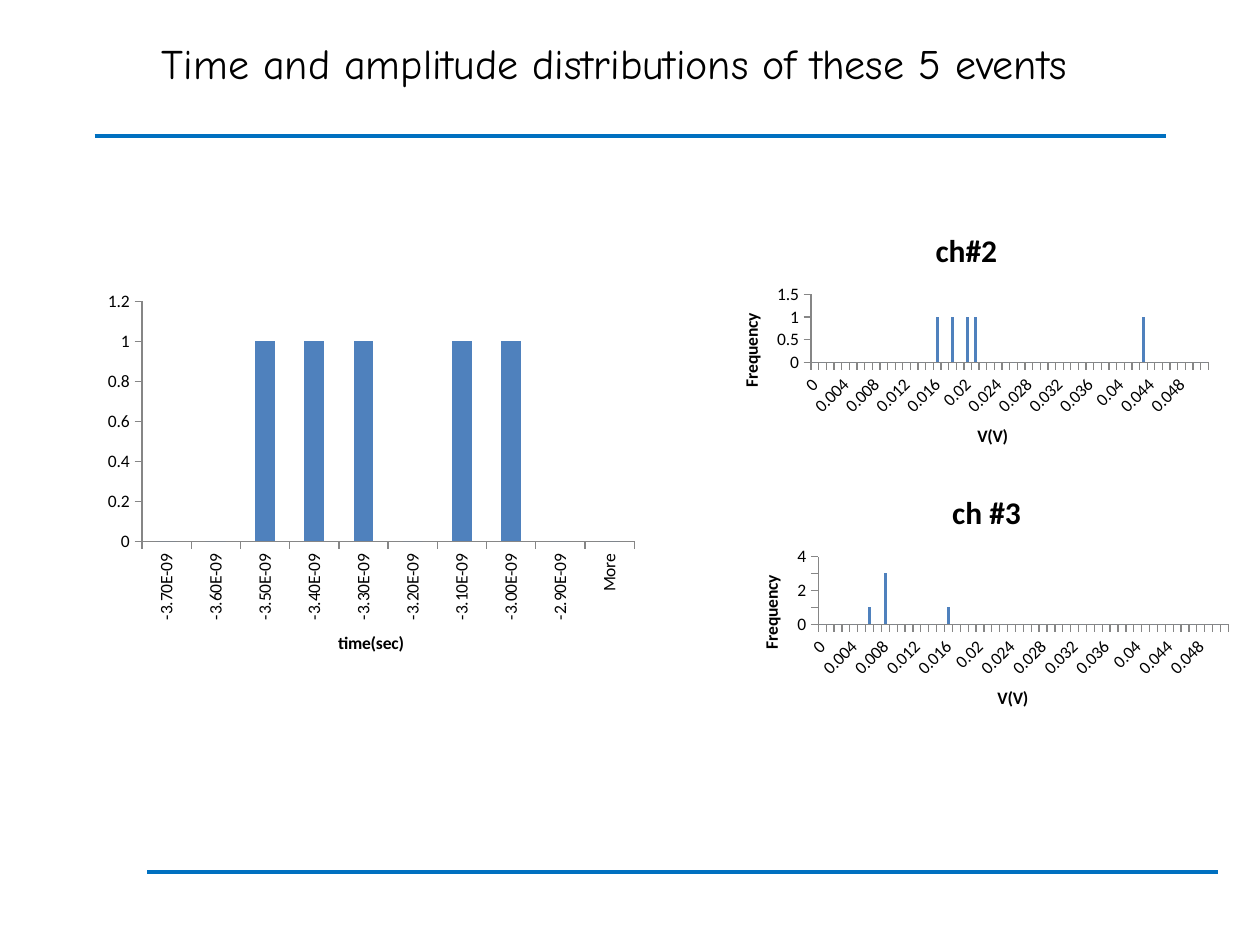
"""Build the slide with time and amplitude histograms of five events."""
import pptx
import pptx.chart.data
import pptx.dml.color
import pptx.enum.chart
import pptx.enum.shapes
import pptx.enum.text
import pptx.oxml
import pptx.util
from pptx.util import Inches, Pt

TITLE = "Time and amplitude distributions of these 5 events"
RULES = [(0.75, 1.08), (1.17, 6.92)]
RULE_WIDTH = 8.5
VOLTS = [f"{i / 1000:g}" for i in range(51)] + ["More"]
TIMES = [f"-{t / 10:.2f}E-09" for t in range(37, 28, -1)] + ["More"]
CHARTS = [
    dict(box=(5.83, 3.75, 4, 2.08), title="ch #3", x_title="V(V)", y_title="Frequency",
         cats=VOLTS, counts={"0.006": 1, "0.008": 3, "0.016": 1}, top=4, step=1, angle=-45),
    dict(box=(5.67, 1.67, 4, 2.08), title="ch#2", x_title="V(V)", y_title="Frequency",
         cats=VOLTS, counts={"0.016": 1, "0.018": 1, "0.02": 1, "0.021": 1, "0.043": 1},
         top=1.5, step=0.5, angle=-45),
    dict(box=(0.77, 2.25, 4.35, 3.14), title=None, x_title="time(sec)", y_title=None,
         cats=TIMES, counts={TIMES[i]: 1 for i in (2, 3, 4, 6, 7)},
         top=1.2, step=0.2, angle=-90),
]


def rgb(value):
    return pptx.dml.color.RGBColor.from_string(value)


def style_font(font, size, name="Calibri", bold=False):
    font.size, font.name, font.bold = Pt(size), name, bold
    font.color.rgb = rgb("000000")


def set_title(owner, text, size):
    tf = (owner.chart_title if hasattr(owner, "chart_title") else owner.axis_title).text_frame
    tf.text = text
    style_font(tf.paragraphs[0].font, size, bold=True)


def add_title(slide):
    sp = slide.shapes.title
    sp.left, sp.top, sp.width, sp.height = map(Inches, (0.5, 0.25, 8.75, 0.5))
    tf = sp.text_frame
    tf.text = TITLE
    tf.word_wrap = True
    tf.vertical_anchor = pptx.enum.text.MSO_ANCHOR.MIDDLE
    p = tf.paragraphs[0]
    p.alignment = pptx.enum.text.PP_ALIGN.CENTER
    style_font(p.font, 24, "Comic Neue")


def add_rule(slide, x, y):
    line = slide.shapes.add_connector(pptx.enum.shapes.MSO_CONNECTOR.STRAIGHT,
                                      Inches(x), Inches(y), Inches(x + RULE_WIDTH), Inches(y))
    line.line.color.rgb = rgb("0070C0")
    line.line.width = Pt(2)
    pptx.oxml.xmlchemy.OxmlElement
    line._element.spPr.append(pptx.oxml.parse_xml(
        '<a:effectLst xmlns:a="http://schemas.openxmlformats.org/drawingml/2006/main"/>'))


def add_histogram(slide, box, title, x_title, y_title, cats, counts, top, step, angle):
    data = pptx.chart.data.CategoryChartData()
    data.categories = cats
    data.add_series("Series 1", [counts.get(c, 0) for c in cats])
    chart = slide.shapes.add_chart(pptx.enum.chart.XL_CHART_TYPE.COLUMN_CLUSTERED,
                                   *map(Inches, box), data).chart
    style_font(chart.font, 10)
    chart.has_legend = False
    chart.has_title = title is not None
    if title:
        set_title(chart, title, 18)
    plot = chart.plots[0]
    plot.gap_width = 150
    plot.vary_by_categories = False
    fill = plot.series[0].format.fill
    fill.solid()
    fill.fore_color.rgb = rgb("4F81BD")
    for axis, text in ((chart.category_axis, x_title), (chart.value_axis, y_title)):
        axis.has_major_gridlines = False
        axis.major_tick_mark = pptx.enum.chart.XL_TICK_MARK.OUTSIDE
        axis.minor_tick_mark = pptx.enum.chart.XL_TICK_MARK.NONE
        axis.format.line.color.rgb = rgb("868686")
        style_font(axis.tick_labels.font, 10)
        if text:
            set_title(axis, text, 10)
    chart.category_axis._element.txPr.bodyPr.set("rot", str(angle * 60000))
    axis = chart.value_axis
    axis.minimum_scale, axis.maximum_scale, axis.major_unit = 0, top, step
    axis.tick_labels.number_format = "General"
    axis.tick_labels.number_format_is_linked = False


def main():
    prs = pptx.Presentation()
    prs.slide_width, prs.slide_height = Inches(10), Inches(7.5)
    slide = prs.slides.add_slide(prs.slide_layouts[5])
    for x, y in RULES:
        add_rule(slide, x, y)
    add_title(slide)
    for chart in CHARTS:
        add_histogram(slide, **chart)
    prs.save("out.pptx")


if __name__ == "__main__":
    main()
